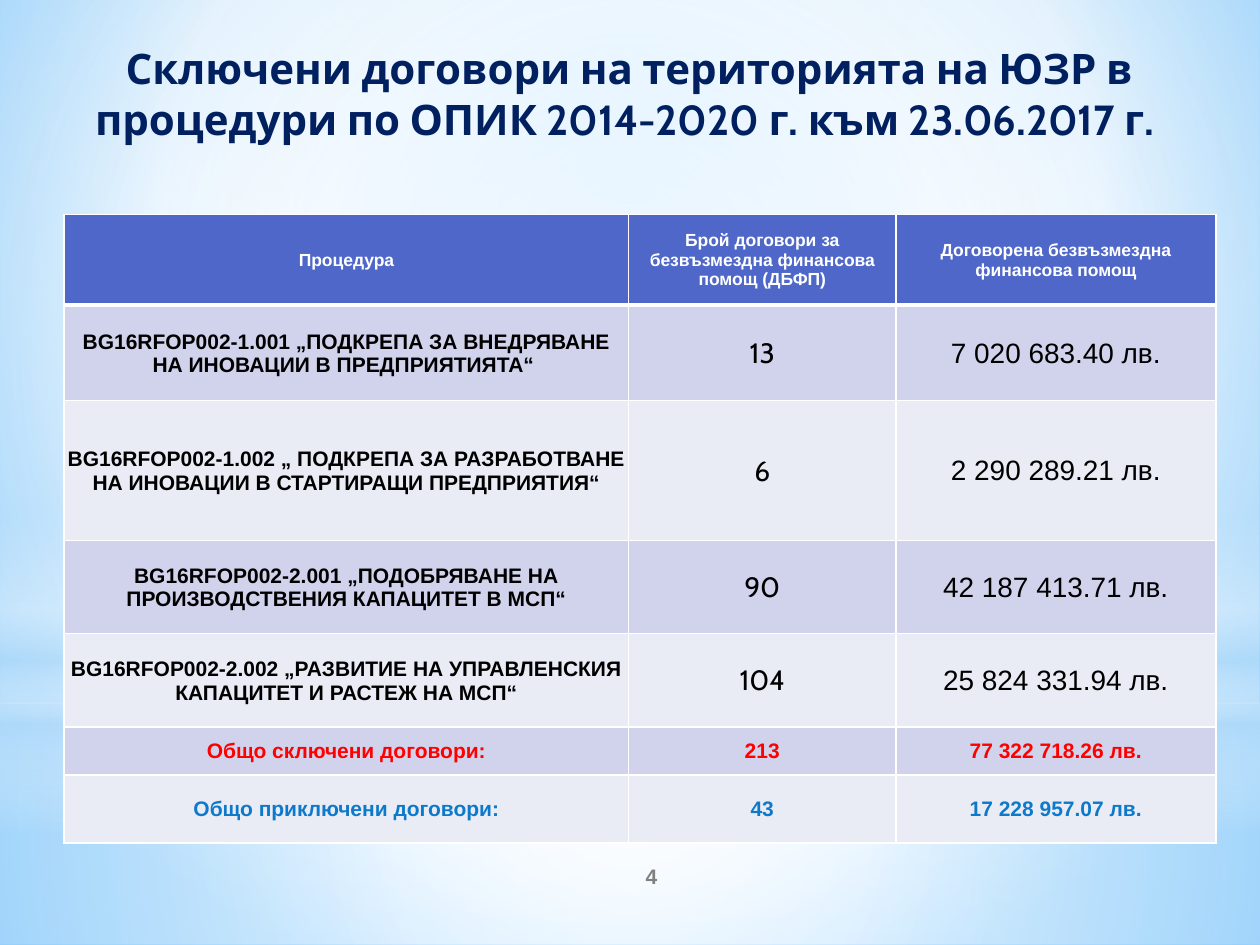
from lxml import etree
from pptx import Presentation
from pptx import util as u
from pptx.dml import color
from pptx.enum import shapes, text
from pptx.oxml import ns

WIDE, HIGH = u.Inches(10), u.Inches(7.5)
WHITE, BLACK, NAVY, GREY = "FFFFFF", "000000", "002060", "808080"
RED, BLUE, HEAD = "FF0000", "0D79CA", "4E67C8"
BANDS = ("E9EBF5", "D0D3EB")
SKY = "B4DCFA"
MID = (50, 50, 50, 50)

COLS = (448, 212, 254)
ROWS = (72, 76, 111, 74, 74, 38, 54)
DATA = (
    ("Процедура", "Брой договори за безвъзмездна финансова помощ (ДБФП)",
     "Договорена безвъзмездна финансова помощ"),
    ("BG16RFOP002-1.001 „ПОДКРЕПА ЗА ВНЕДРЯВАНЕ НА ИНОВАЦИИ В ПРЕДПРИЯТИЯТА“ ",
     "13", "7 020 683.40 лв."),
    ("BG16RFOP002-1.002 „ ПОДКРЕПА ЗА РАЗРАБОТВАНЕ НА ИНОВАЦИИ В СТАРТИРАЩИ ПРЕДПРИЯТИЯ“",
     "6", "2 290 289.21 лв."),
    ("BG16RFOP002-2.001 „ПОДОБРЯВАНЕ НА ПРОИЗВОДСТВЕНИЯ КАПАЦИТЕТ В МСП“",
     "90", "42 187 413.71 лв."),
    ("BG16RFOP002-2.002 „РАЗВИТИЕ НА УПРАВЛЕНСКИЯ КАПАЦИТЕТ И РАСТЕЖ НА МСП“",
     "104", "25 824 331.94 лв."),
    ("Общо сключени договори:", "213", "77 322 718.26 лв."),
    ("Общо приключени договори:", "43", "17 228 957.07 лв."),
)


def rgb(code):
    return color.RGBColor.from_string(code)


def place(left, top, wide, high):
    """Turn percentages of the slide into lengths."""
    return [int(part * side / 100) for part, side in
            zip((left, top, wide, high), (WIDE, HIGH, WIDE, HIGH))]


def node(mum, tag, **atts):
    return etree.SubElement(mum, ns.qn(tag), {k: str(v) for k, v in atts.items()})


def blend(fill, mum, stops, rect=None):
    """Swap a solid fill for a gradient: round if rect is given, else downward."""
    fill.solid()
    fill.fore_color.rgb = rgb(WHITE)
    old = mum.find(ns.qn("a:solidFill"))
    grad = etree.Element(ns.qn("a:gradFill"), rotWithShape="1")
    mum.replace(old, grad)
    row = node(grad, "a:gsLst")
    for pos, code, alpha in stops:
        stop = node(row, "a:gs", pos=pos * 1000)
        tint = node(stop, "a:srgbClr", val=code)
        if alpha < 100:
            node(tint, "a:alpha", val=alpha * 1000)
    if rect:
        way = node(grad, "a:path", path="circle")
        node(way, "a:fillToRect", **{k: v * 1000 for k, v in zip("ltrb", rect)})
    else:
        node(grad, "a:lin", ang=5400000, scaled=0)


def write(frame, words, size=12, font="Arial", ink=BLACK, bold=True):
    para = frame.paragraphs[0]
    para.alignment = text.PP_ALIGN.CENTER
    run = para.add_run()
    run.text = words
    run.font.size = u.Pt(size)
    run.font.name = font
    run.font.bold = bold
    run.font.color.rgb = rgb(ink)


def label(slide, box, words, anchor=text.MSO_ANCHOR.TOP, **style):
    frame = slide.shapes.add_textbox(*box).text_frame
    frame.word_wrap = True
    frame.vertical_anchor = anchor
    write(frame, words, **style)


def glow(slide, kind, box, stops, rect=None):
    shape = slide.shapes.add_shape(kind, *box)
    shape.shadow.inherit = False
    shape.line.fill.background()
    blend(shape.fill, shape.element.spPr, stops, rect)


def scene(slide):
    """Sky background with its layers of light."""
    back = slide.background.fill
    back.solid()
    blend(back, slide.element.find(".//" + ns.qn("p:bgPr")),
          [(0, "9ED5FF", 100), (60, WHITE, 100), (100, "5BB9FF", 100)],
          (20, 10, 20, 60))
    rect, oval = shapes.MSO_SHAPE.RECTANGLE, shapes.MSO_SHAPE.OVAL
    glow(slide, rect, place(0, 74.4, 100, 25.6),
         [(0, WHITE, 91), (37, WHITE, 76), (100, SKY, 79)], MID)
    glow(slide, rect, place(0, 0, 100, 74.4),
         [(0, WHITE, 89), (48, WHITE, 62), (100, SKY, 79)], MID)
    glow(slide, rect, place(0, 54.93, 100, 33.33),
         [(0, WHITE, 0), (29, WHITE, 30), (45, SKY, 40),
          (55, WHITE, 26), (65, SKY, 60), (100, WHITE, 0)])
    glow(slide, oval, place(0, 23.33, 100, 74.4),
         [(0, WHITE, 100), (56, WHITE, 0)], MID)


def edge(cell, row):
    """White borders, thick between the head and the body."""
    props = cell._tc.get_or_add_tcPr()
    thick = {0: "a:lnB", 1: "a:lnT"}.get(row)
    for spot, tag in enumerate(("a:lnL", "a:lnR", "a:lnT", "a:lnB")):
        line = etree.Element(ns.qn(tag), w=str(u.Pt(3 if tag == thick else 1)))
        node(node(line, "a:solidFill"), "a:srgbClr", val=WHITE)
        props.insert(spot, line)


def style(row, col):
    if row == 0:
        return dict(size=10, ink=WHITE)
    if row > 4:
        return dict(ink=RED if row == 5 else BLUE)
    if col == 0:
        return {}
    return dict(size=16, bold=False, font="Cabin" if col == 1 else "Arial")


def grid(slide, box):
    table = slide.shapes.add_table(len(ROWS), len(COLS), *box).table
    for col, part in zip(table.columns, COLS):
        col.width = int(box[2] * part / sum(COLS))
    for line, part in zip(table.rows, ROWS):
        line.height = int(box[3] * part / sum(ROWS))
    for row, line in enumerate(DATA):
        for col, words in enumerate(line):
            cell = table.cell(row, col)
            cell.fill.solid()
            cell.fill.fore_color.rgb = rgb(BANDS[row % 2] if row else HEAD)
            cell.vertical_anchor = text.MSO_ANCHOR.MIDDLE
            cell.margin_left = cell.margin_right = cell.margin_top = u.Inches(0.01)
            cell.margin_bottom = 0
            write(cell.text_frame, words, **style(row, col))
            edge(cell, row)


def main():
    deck = Presentation()
    deck.slide_width, deck.slide_height = WIDE, HIGH
    slide = deck.slides.add_slide(deck.slide_layouts[6])
    scene(slide)
    label(slide, place(41.7, 90, 20, 5.33), "4",
          anchor=text.MSO_ANCHOR.MIDDLE, ink=GREY)
    label(slide, place(3.5, 3.87, 92.9, 17.87),
          "Сключени договори на територията на ЮЗР в процедури по ОПИК "
          "2014-2020 г. към 23.06.2017 г. ", size=24, font="Cabin", ink=NAVY)
    grid(slide, place(5.1, 22.67, 91.4, 66.53))
    deck.save("out.pptx")


if __name__ == "__main__":
    main()
